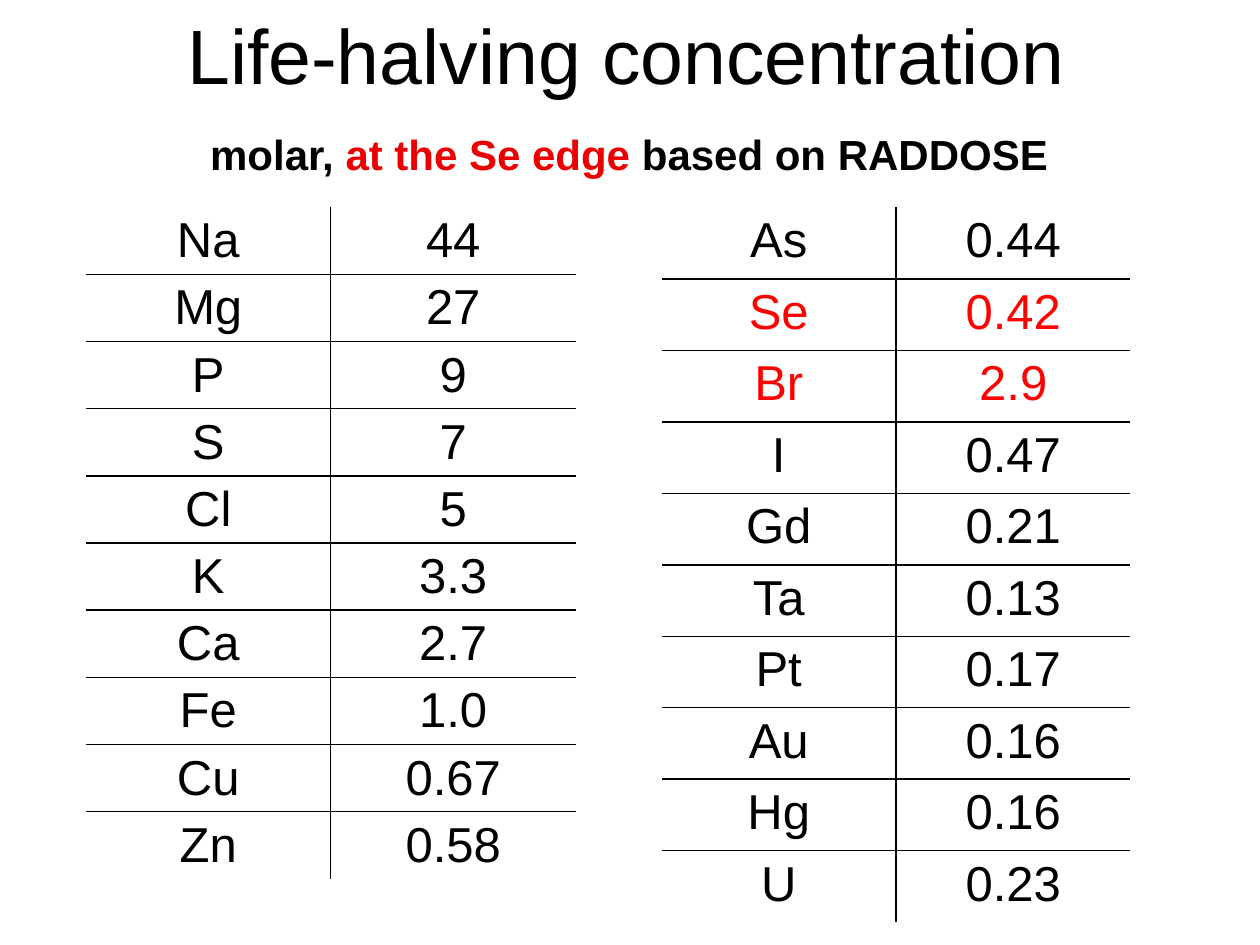
from lxml import etree
from pptx import Presentation
from pptx.dml.color import RGBColor
from pptx.enum.text import MSO_ANCHOR, PP_ALIGN
from pptx.oxml.ns import qn
from pptx.util import Pt

BLACK = RGBColor(0x00, 0x00, 0x00)
RED = RGBColor(0xFF, 0x00, 0x00)
DARK_RED = RGBColor(0xEA, 0x00, 0x00)
FONT = "Arial"
CENTER = PP_ALIGN.CENTER
MIDDLE = MSO_ANCHOR.MIDDLE
TITLE_ONLY = 5

LIGHT_ELEMENTS = [
    ("Na", "44"), ("Mg", "27"), ("P", "9"), ("S", "7"), ("Cl", "5"),
    ("K", "3.3"), ("Ca", "2.7"), ("Fe", "1.0"), ("Cu", "0.67"), ("Zn", "0.58"),
]
HEAVY_ELEMENTS = [
    ("As", "0.44"), ("Se", "0.42"), ("Br", "2.9"), ("I", "0.47"), ("Gd", "0.21"),
    ("Ta", "0.13"), ("Pt", "0.17"), ("Au", "0.16"), ("Hg", "0.16"), ("U", "0.23"),
]
HIGHLIGHTED = {"Se", "Br"}


def add_run(paragraph, text, size, color, bold=False):
    run = paragraph.add_run()
    run.text = text
    run.font.name = FONT
    run.font.size = Pt(size)
    run.font.bold = bold
    run.font.color.rgb = color


def set_borders(cell, visible_sides):
    """Draw 1 pt black lines on the given sides and none on the others."""
    properties = cell._tc.get_or_add_tcPr()
    for index, side in enumerate("LRTB"):
        line = etree.Element(qn(f"a:ln{side}"), w=str(Pt(1)))
        if side in visible_sides:
            fill = etree.SubElement(line, qn("a:solidFill"))
            etree.SubElement(fill, qn("a:srgbClr"), val=str(BLACK))
        else:
            etree.SubElement(line, qn("a:noFill"))
        properties.insert(index, line)


def place_title(slide, left, top, width, height):
    title = slide.shapes.title
    title.left, title.top = Pt(left), Pt(top)
    title.width, title.height = Pt(width), Pt(height)
    title.text_frame.vertical_anchor = MIDDLE
    paragraph = title.text_frame.paragraphs[0]
    paragraph.alignment = CENTER
    add_run(paragraph, "Life-halving concentration", 44, BLACK)


def add_subtitle(slide, left, top, width, height):
    box = slide.shapes.add_textbox(Pt(left), Pt(top), Pt(width), Pt(height))
    box.text_frame.word_wrap = False
    paragraph = box.text_frame.paragraphs[0]
    add_run(paragraph, "molar, ", 24, BLACK, bold=True)
    add_run(paragraph, "at the Se edge", 24, DARK_RED, bold=True)
    add_run(paragraph, " based on RADDOSE", 24, BLACK, bold=True)


def add_concentration_table(slide, entries, left, top, width, height):
    row_count, column_count = len(entries), len(entries[0])
    table = slide.shapes.add_table(
        row_count, column_count, Pt(left), Pt(top), Pt(width), Pt(height)
    ).table
    table.first_row = False
    table.horz_banding = False

    for row_index, entry in enumerate(entries):
        color = RED if entry[0] in HIGHLIGHTED else BLACK
        for column_index, text in enumerate(entry):
            cell = table.cell(row_index, column_index)
            cell.fill.background()
            cell.margin_bottom = 0  # keeps the rows from growing
            paragraph = cell.text_frame.paragraphs[0]
            paragraph.alignment = CENTER
            add_run(paragraph, text, 28, color)

            # Only the lines between cells show
            sides = "R" if column_index == 0 else "L"
            if row_index > 0:
                sides += "T"
            if row_index < row_count - 1:
                sides += "B"
            set_borders(cell, sides)


def main():
    presentation = Presentation()
    presentation.slide_width = Pt(720)
    presentation.slide_height = Pt(540)
    slide = presentation.slides.add_slide(presentation.slide_layouts[TITLE_ONLY])

    # Headings
    place_title(slide, 34, -14.4, 648, 90)
    add_subtitle(slide, 113, 70, 495, 36)

    # Tables side by side
    add_concentration_table(slide, LIGHT_ELEMENTS, 49, 118.4, 280, 384)
    add_concentration_table(slide, HEAVY_ELEMENTS, 378, 118.5, 268, 408.5)

    presentation.save("out.pptx")


if __name__ == "__main__":
    main()
